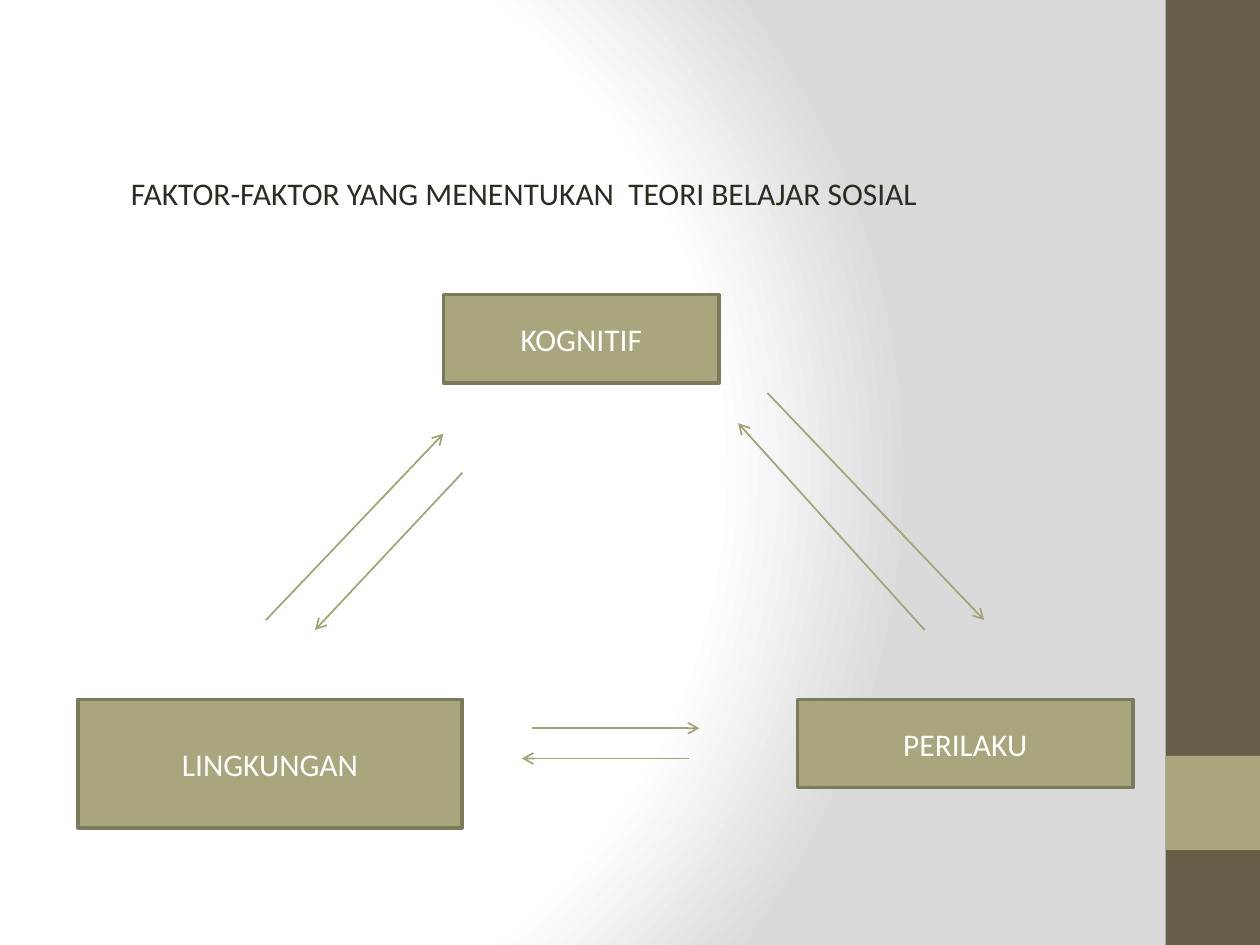
from pptx import Presentation
from pptx.dml.color import RGBColor
from pptx.enum.shapes import MSO_CONNECTOR, MSO_SHAPE
from pptx.enum.text import MSO_ANCHOR, PP_ALIGN
from pptx.oxml import parse_xml
from pptx.oxml.ns import nsdecls, qn
from pptx.util import Cm, Pt
from lxml.etree import SubElement

COLORS = {
    "dark": "675E47", "olive": "A9A57C", "edge": "7D7A5C", "arrow": "A6A278",
    "ink": "2F2B20", "white": "FFFFFF", "shade": "DADADA",
}
WIDTH, HEIGHT = 25.4, 19.05

# Positions in cm, relative to the diagram's top left corner
FACTORS = [
    ("KOGNITIF", 7.37, 0, 5.56, 1.78),
    ("PERILAKU", 14.51, 8.16, 6.76, 1.78),
    ("LINGKUNGAN", 0, 8.16, 7.75, 2.59),
]
ARROWS = [
    ((13.9, 1.98), (18.27, 6.56)),   # kognitif to perilaku
    ((12.32, 9.35), (8.95, 9.35)),   # perilaku to lingkungan
    ((3.79, 6.56), (7.37, 2.8)),     # lingkungan to kognitif
    ((7.75, 3.59), (4.78, 6.76)),    # kognitif to lingkungan
    ((9.15, 8.74), (12.53, 8.74)),   # lingkungan to perilaku
    ((17.07, 6.76), (13.31, 2.59)),  # perilaku to kognitif
]


def color(name):
    return RGBColor.from_string(COLORS[name])


def write(frame, text, ink, align=PP_ALIGN.LEFT, anchor=MSO_ANCHOR.TOP, size=18):
    frame.word_wrap = True
    frame.vertical_anchor = anchor
    para = frame.paragraphs[0]
    para.alignment = align
    span = para.add_run()
    span.text = text
    span.font.name = "Calibri"
    span.font.size = Pt(size)
    span.font.color.rgb = color(ink)


def add_rectangle(page, left, top, width, height, fill, edge=None):
    box = page.shapes.add_shape(
        MSO_SHAPE.RECTANGLE, Cm(left), Cm(top), Cm(width), Cm(height))
    box.shadow.inherit = False
    box.fill.solid()
    box.fill.fore_color.rgb = color(fill)
    if edge:
        box.line.color.rgb = color(edge)
        box.line.width = Pt(2)
    else:
        box.line.fill.background()
    return box


def add_arrow(page, start, end):
    arrow = page.shapes.add_connector(
        MSO_CONNECTOR.STRAIGHT, *(Cm(value) for value in start + end))
    arrow.line.color.rgb = color("arrow")
    arrow.line.width = Pt(1)
    SubElement(arrow.line._get_or_add_ln(), qn("a:tailEnd"), type="arrow")
    SubElement(arrow.element.spPr, qn("a:effectLst"))


def paint_background(page):
    """Fill the page with a radial gradient, white at the left."""
    page.background.fill.gradient()
    gradient = page.element.find(".//" + qn("a:gradFill"))
    stops = "".join(
        f'<a:gs pos="{place * 1000}"><a:srgbClr val="{COLORS[name]}"/></a:gs>'
        for place, name in ((0, "white"), (75, "white"), (100, "shade")))
    gradient.getparent().replace(gradient, parse_xml(
        f'<a:gradFill {nsdecls("a")} rotWithShape="1"><a:gsLst>{stops}</a:gsLst>'
        '<a:path path="circle">'
        '<a:fillToRect l="20000" t="50000" r="100000" b="50000"/>'
        '</a:path></a:gradFill>'))


def add_sidebar(page, left, top, width, height):
    add_rectangle(page, left, top, width, height, "dark")
    add_rectangle(page, left, top + 0.8 * height, width, width, "olive")


def add_title(page, left, top, width, height):
    box = page.shapes.add_textbox(Cm(left), Cm(top), Cm(width), Cm(height))
    write(box.text_frame, "FAKTOR-FAKTOR YANG MENENTUKAN  TEORI BELAJAR SOSIAL", "ink")


def add_diagram(page, left, top):
    for name, x, y, width, height in FACTORS:
        box = add_rectangle(page, left + x, top + y, width, height, "olive", "edge")
        write(box.text_frame, name, "white", PP_ALIGN.CENTER, MSO_ANCHOR.MIDDLE)
    for start, end in ARROWS:
        add_arrow(page, *((left + x, top + y) for x, y in (start, end)))


def main():
    deck = Presentation()
    deck.slide_width, deck.slide_height = Cm(WIDTH), Cm(HEIGHT)
    page = deck.slides.add_slide(deck.slide_layouts[6])
    paint_background(page)
    add_sidebar(page, 23.5, 0, 1.9, HEIGHT)
    add_title(page, 2.39, 3.38, 21.97, 1.8)
    add_diagram(page, 1.57, 5.94)
    deck.save("out.pptx")


if __name__ == "__main__":
    main()
